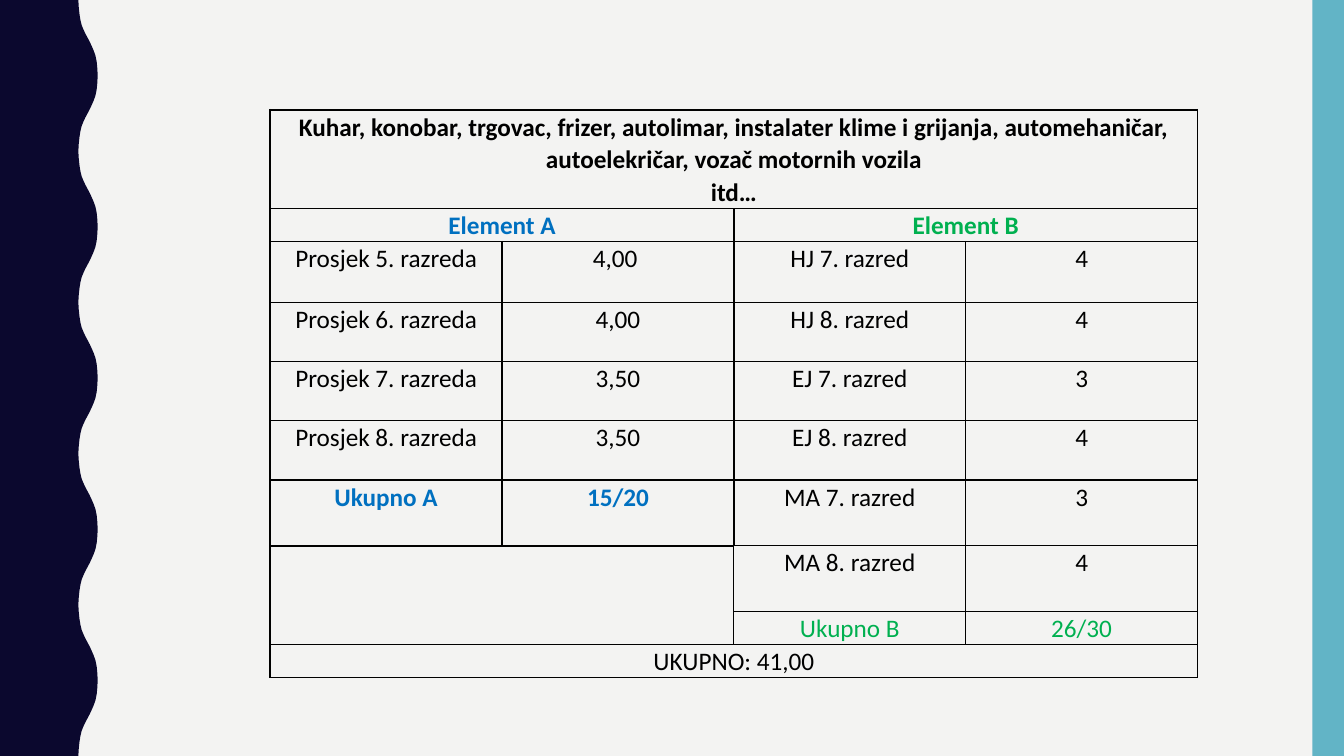
"""Build the slide with the admission points table for three-year vocational programmes."""
from lxml.etree import SubElement
from pptx import Presentation
from pptx.dml.color import RGBColor
from pptx.enum.shapes import MSO_SHAPE
from pptx.enum.text import PP_ALIGN
from pptx.oxml.ns import qn
from pptx.util import Pt

THEME = {
    "background": RGBColor.from_string("F3F3F2"),
    "wave": RGBColor.from_string("0B082E"),
    "stripe": RGBColor.from_string("62B4C6"),
    "text": RGBColor.from_string("000000"),
    "element_a": RGBColor.from_string("0070C0"),
    "element_b": RGBColor.from_string("00B050"),
    "font": "Calibri",
    "size": Pt(18),
    "thin": Pt(1),
    "thick": Pt(1.5),
}
CELL_FORMAT = {"margin_left": Pt(5), "margin_right": Pt(5), "margin_top": 0, "margin_bottom": 0}
PARAGRAPH_FORMAT = {"alignment": PP_ALIGN.CENTER, "line_spacing": 1.07}
FONT_FORMAT = {"name": THEME["font"], "size": THEME["size"]}


def apply_format(target, values):
    for name, value in values.items():
        setattr(target, name, value)


def draw_border(cell, side, width):
    line = SubElement(cell._tc.get_or_add_tcPr(), qn(f"a:ln{side}"), w=str(width))
    fill = SubElement(line, qn("a:solidFill"))
    SubElement(fill, qn("a:srgbClr"), val=str(THEME["text"]))


presentation = Presentation()
presentation.slide_width, presentation.slide_height = Pt(960), Pt(540)
slide = presentation.slides.add_slide(presentation.slide_layouts[6])
slide.background.fill.solid()
slide.background.fill.fore_color.rgb = THEME["background"]

wave_base, wave_period = 56, 108
rise = [(0, 0), (0.3, 5), (0.8, 10), (1.5, 14.4), (2.4, 18), (3.6, 21), (5, 24), (6.6, 27),
        (8.2, 30), (9.6, 33), (10.9, 36), (12.2, 39.6), (13.1, 44), (13.6, 49), (13.8, 54)]
crest = rise + [(x, wave_period - y) for x, y in reversed(rise[:-1])]
wave_outline = [(Pt(wave_base + x), Pt(period * wave_period + y))
                for period in range(5) for x, y in crest]
wave_builder = slide.shapes.build_freeform(0, 0)
wave_builder.add_line_segments(wave_outline + [(0, Pt(540))], close=True)
wave = wave_builder.convert_to_shape()
stripe = slide.shapes.add_shape(MSO_SHAPE.RECTANGLE, Pt(937.5), 0, Pt(22.5), Pt(540))
for band, color in ((wave, "wave"), (stripe, "stripe")):
    band.shadow.inherit = False
    band.fill.solid()
    band.fill.fore_color.rgb = THEME[color]
    band.line.fill.background()

programmes = ("Kuhar, konobar, trgovac, frizer, autolimar, instalater klime i grijanja, "
              "automehaničar, autoelekričar, vozač motornih vozila\nitd…")
rows = [
    (70.5, [programmes, "", "", ""]),
    (23.5, ["Element A", "", "Element B", ""]),
    (43.4, ["Prosjek 5. razreda", "4,00 ", "HJ 7. razred", "4"]),
    (42.3, ["Prosjek 6. razreda", "4,00", "HJ 8. razred", "4"]),
    (42.3, ["Prosjek 7. razreda", "3,50", "EJ 7. razred", "3"]),
    (42.3, ["Prosjek 8. razreda", "3,50", "EJ 8. razred", "4"]),
    (47, ["Ukupno A", "15/20", "MA 7. razred", "3"]),
    (47, ["", "", "MA 8. razred", "4"]),
    (23.5, ["", "", "Ukupno B", "26/30"]),
    (23.5, ["UKUPNO: 41,00", "", "", ""]),
]
merges = [(0, 0, 0, 3), (1, 0, 1, 1), (1, 2, 1, 3), (7, 0, 8, 1), (9, 0, 9, 3)]
bold_cells = {(0, 0), (1, 0), (1, 2), (6, 0), (6, 1)}
accents = {(1, 0): "element_a", (6, 0): "element_a", (6, 1): "element_a",
           (1, 2): "element_b", (8, 2): "element_b", (8, 3): "element_b"}

points = slide.shapes.add_table(
    len(rows), 4, Pt(193), Pt(78.5), Pt(662.4), Pt(sum(height for height, _ in rows))).table
points.first_row = points.horz_banding = False
for column in points.columns:
    column.width = Pt(165.6)
for top, left, bottom, right in merges:
    points.cell(top, left).merge(points.cell(bottom, right))

for r, (height, texts) in enumerate(rows):
    points.rows[r].height = Pt(height)
    for c, text in enumerate(texts):
        cell = points.cell(r, c)
        apply_format(cell, CELL_FORMAT)
        if not cell.is_spanned:
            last_row = r + cell.span_height - 1 if cell.is_merge_origin else r
            last_column = c + cell.span_width - 1 if cell.is_merge_origin else c
            divided = 1 <= r <= 6
            thick_sides = {
                "L": c == 0 or (c == 2 and divided),
                "R": last_column == 3 or (last_column == 1 and divided),
                "T": r == 0 or (r == 7 and c == 0),
                "B": last_row == 9 or (r == 6 and c < 2) or (r == 8 and c >= 2),
            }
            for side, thick in thick_sides.items():
                draw_border(cell, side, THEME["thick" if thick else "thin"])
        cell.fill.background()
        if text:
            cell.text = text
        for paragraph in cell.text_frame.paragraphs:
            apply_format(paragraph, PARAGRAPH_FORMAT)
            apply_format(paragraph.font, FONT_FORMAT)
            for run in paragraph.runs:
                apply_format(run.font, {**FONT_FORMAT, "bold": (r, c) in bold_cells})
                run.font.color.rgb = THEME[accents.get((r, c), "text")]

presentation.save("out.pptx")
